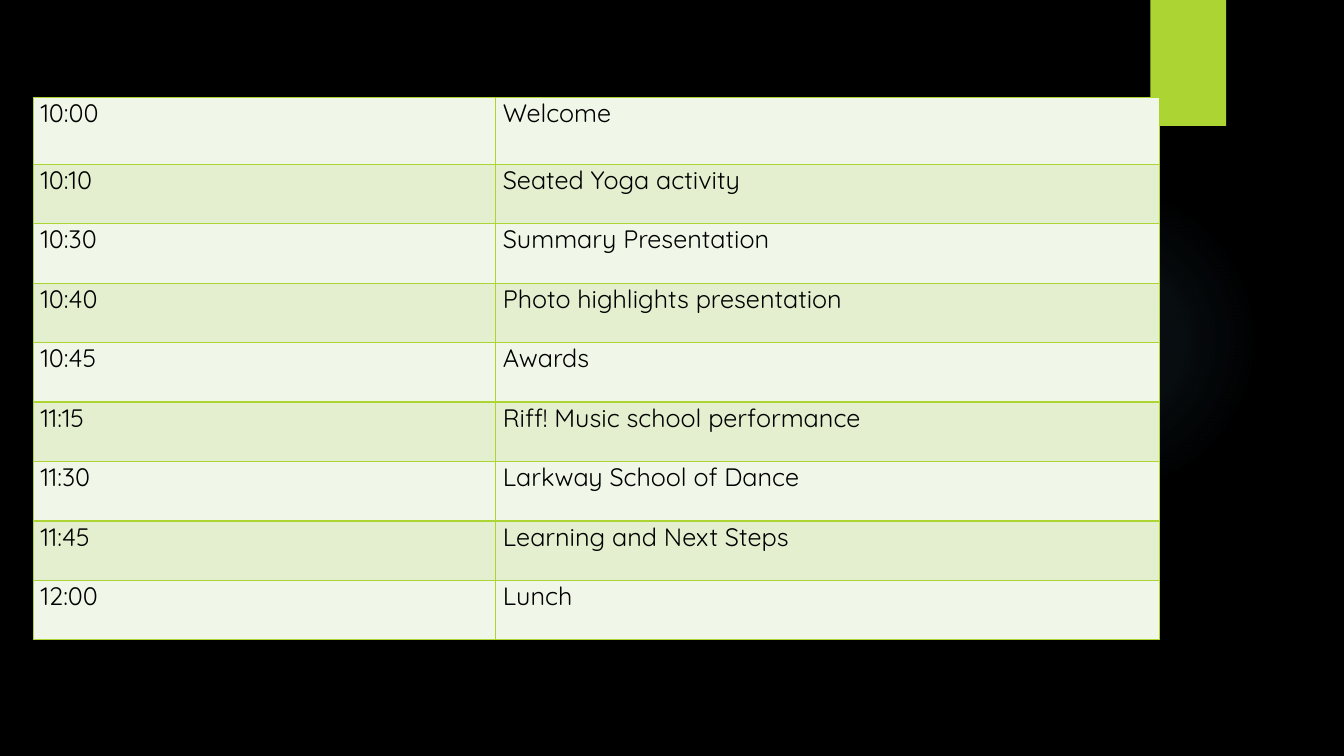
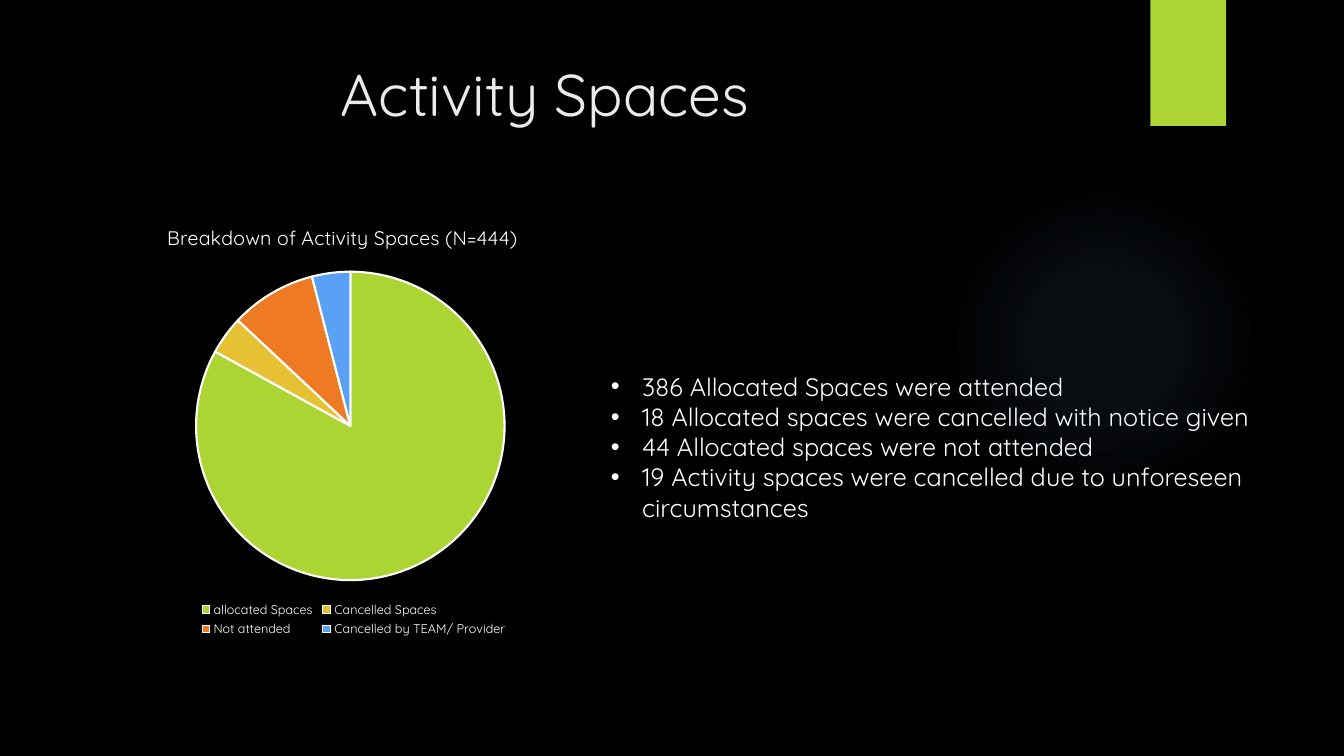
from lxml import etree
from pptx import Presentation
from pptx import util as u
from pptx.chart.data import CategoryChartData
from pptx.dml.color import RGBColor
from pptx.enum import chart as ch, shapes, text
from pptx.oxml import parse_xml
from pptx.oxml.ns import nsdecls, qn

FONT = "Quicksand"
BLACK, WHITE, TITLE = "000000", "FFFFFF", "EBEBEB"
LIME, GLOW = "ACD433", "7AC4F0"
ROW_FILLS = ("F1F7E8", "E3EFCE")
SLICES = (LIME, "E6C133", "EF7A24", "5AA0F5")
WIDTH, HEIGHT = u.Inches(13.33), u.Inches(7.5)
TITLE_ONLY_LIST, BLANK = 1, 6

AGENDA = (
    ("10:00", "Welcome"),
    ("10:10", "Seated Yoga activity"),
    ("10:30", "Summary Presentation"),
    ("10:40", "Photo highlights presentation"),
    ("10:45", "Awards"),
    ("11:15", "Riff! Music school performance"),
    ("11:30", "Larkway School of Dance"),
    ("11:45", "Learning and Next Steps"),
    ("12:00", "Lunch"),
)
SPACES = (
    ("allocated Spaces", 83),
    ("Cancelled Spaces", 4),
    ("Not attended", 9),
    ("Cancelled by TEAM/ Provider", 4),
)
FINDINGS = (
    "386 Allocated Spaces were attended",
    "18 Allocated spaces were cancelled with notice given",
    "44 Allocated spaces were not attended",
    "19 Activity spaces were cancelled due to unforeseen\ncircumstances",
)


def rgb(value):
    """Turn a hex string into a colour."""
    return RGBColor.from_string(value)


def box(x, y, w, h):
    """Turn percentages of the slide into left, top, width and height."""
    return [int(side * share / 100)
            for side, share in zip((WIDTH, HEIGHT, WIDTH, HEIGHT), (x, y, w, h))]


def paint(fill, color):
    """Apply a solid fill."""
    fill.solid()
    fill.fore_color.rgb = rgb(color)


def style(font, size, color):
    """Set the shared typeface with a size and colour."""
    font.name, font.size = FONT, u.Pt(size)
    font.color.rgb = rgb(color)


def write(p, content, size, color):
    """Write styled runs, with a line break at each newline."""
    for i, line in enumerate(content.split("\n")):
        if i:
            p.add_line_break()
        r = p.add_run()
        r.text = line
        style(r.font, size, color)


def add_plain_shape(slide, kind, area):
    """Add a preset shape without outline or shadow."""
    sp = slide.shapes.add_shape(kind, *box(*area))
    sp.shadow.inherit = False
    sp.line.fill.background()
    return sp


def add_glow(slide):
    """Add the faint round glow on the right."""
    sp = add_plain_shape(slide, shapes.MSO_SHAPE.OVAL, (70.6, 24.4, 23.1, 41.07))
    stops = "".join(
        f'<a:gs pos="{pos}000"><a:srgbClr val="{GLOW}"><a:alpha val="{alpha}000"/></a:srgbClr></a:gs>'
        for pos, alpha in ((0, 7), (36, 6), (69, 0), (100, 0)))
    gradient = parse_xml(
        f'<a:gradFill {nsdecls("a")}><a:gsLst>{stops}</a:gsLst><a:path path="circle">'
        '<a:fillToRect l="50000" t="50000" r="50000" b="50000"/></a:path></a:gradFill>')
    sp.element.spPr.find(qn("a:prstGeom")).addnext(gradient)


def add_slide(prs, layout):
    """Add a slide with the shared glow and lime tab."""
    slide = prs.slides.add_slide(prs.slide_layouts[layout])
    add_glow(slide)
    tab = add_plain_shape(slide, shapes.MSO_SHAPE.RECTANGLE, (85.6, 0, 5.63, 16.67))
    paint(tab.fill, LIME)
    return slide


def fill_placeholder(sp, area):
    """Place a placeholder and return its top-anchored text frame."""
    sp.left, sp.top, sp.width, sp.height = box(*area)
    tf = sp.text_frame
    tf.word_wrap = True
    tf.auto_size = text.MSO_AUTO_SIZE.NONE
    tf.vertical_anchor = text.MSO_ANCHOR.TOP
    return tf


def set_title(slide, content, area):
    """Fill the title placeholder."""
    p = fill_placeholder(slide.shapes.title, area).paragraphs[0]
    p.alignment = text.PP_ALIGN.LEFT
    write(p, content, 42, TITLE)


def set_bullets(slide, items, area):
    """Fill the body placeholder with a bulleted list."""
    tf = fill_placeholder(slide.placeholders[1], area)
    indent = u.Inches(0.31)
    for i, item in enumerate(items):
        p = tf.add_paragraph() if i else tf.paragraphs[0]
        pPr = p._p.get_or_add_pPr()
        pPr.set("marL", str(indent))
        pPr.set("indent", str(-indent))
        etree.SubElement(pPr, qn("a:buFont")).set("typeface", "Arial")
        etree.SubElement(pPr, qn("a:buChar")).set("char", "•")
        p.space_before = u.Pt(0)
        write(p, item, 18, WHITE)


def set_borders(cell, color):
    """Draw a one-point border on all sides of a cell."""
    tcPr = cell._tc.get_or_add_tcPr()
    for side in "LRTB":
        tcPr.append(parse_xml(
            f'<a:ln{side} {nsdecls("a")} w="12700"><a:solidFill>'
            f'<a:srgbClr val="{color}"/></a:solidFill></a:ln{side}>'))


def add_agenda(slide, rows, area):
    """Add the banded timetable."""
    frame = slide.shapes.add_table(len(rows), 2, *box(*area))
    table = frame.table
    for column, share in zip(table.columns, (0.38, 0.62)):
        column.width = int(frame.width * share)
    for i, row in enumerate(rows):
        table.rows[i].height = u.Inches(0.59 if i else 0.66)
        for cell, content in zip(table.rows[i].cells, row):
            cell.margin_left = cell.margin_right = u.Inches(0.07)
            cell.margin_top = cell.margin_bottom = 0
            set_borders(cell, LIME)
            paint(cell.fill, ROW_FILLS[i % 2])
            write(cell.text_frame.paragraphs[0], content, 18, BLACK)


def place_part(chart, name, index, **shares):
    """Fix a chart part at shares of the chart's size."""
    part = chart.element.xpath(f"c:chart//c:{name}")[0]
    for old in part.findall(qn("c:layout")):
        part.remove(old)
    modes = "".join(f'<c:{axis}Mode val="edge"/>' for axis in "xy")
    values = "".join(f'<c:{key} val="{share}"/>' for key, share in shares.items())
    part.insert(index, parse_xml(
        f'<c:layout {nsdecls("c")}><c:manualLayout>{modes}{values}'
        '</c:manualLayout></c:layout>'))


def add_pie(slide, title, items, area):
    """Add a pie chart with a title above and a legend below."""
    data = CategoryChartData()
    data.categories = [name for name, _ in items]
    data.add_series("Series 1", [value for _, value in items])
    chart = slide.shapes.add_chart(ch.XL_CHART_TYPE.PIE, *box(*area), data).chart
    style(chart.font, 10, WHITE)
    chart.has_title = True
    write(chart.chart_title.text_frame.paragraphs[0], title, 14, WHITE)
    chart.chart_title.text_frame.paragraphs[0].runs[0].font.bold = False
    chart.has_legend = True
    chart.legend.position = ch.XL_LEGEND_POSITION.BOTTOM
    chart.legend.include_in_layout = False
    style(chart.legend.font, 9, WHITE)
    plot = chart.plots[0]
    plot.vary_by_categories = True
    for i, color in enumerate(SLICES):
        point = plot.series[0].points[i].format
        paint(point.fill, color)
        point.line.color.rgb = rgb(WHITE)
        point.line.width = u.Pt(1.5)
    place_part(chart, "plotArea", 0, x=0.26, y=0.15, w=0.48, h=0.71)
    place_part(chart, "title", 1, x=0.21, y=0.03)
    place_part(chart, "legend", 1, x=0.26, y=0.9, w=0.49, h=0.1)


def main():
    """Build and save the presentation."""
    prs = Presentation()
    prs.slide_width, prs.slide_height = WIDTH, HEIGHT
    paint(prs.slide_master.background.fill, BLACK)

    add_agenda(add_slide(prs, BLANK), AGENDA, (2.5, 12.93, 90.5, 71.87))

    slide = add_slide(prs, TITLE_ONLY_LIST)
    set_title(slide, "Activity Spaces", (24.6, 6.93, 75.4, 20.4))
    add_pie(slide, "Breakdown of Activity Spaces (N=444)", SPACES,
            (2.1, 27.33, 47.94, 57.47))
    set_bullets(slide, FINDINGS, (44.7, 48.4, 54.1, 21.6))

    prs.save("out.pptx")


if __name__ == "__main__":
    main()
